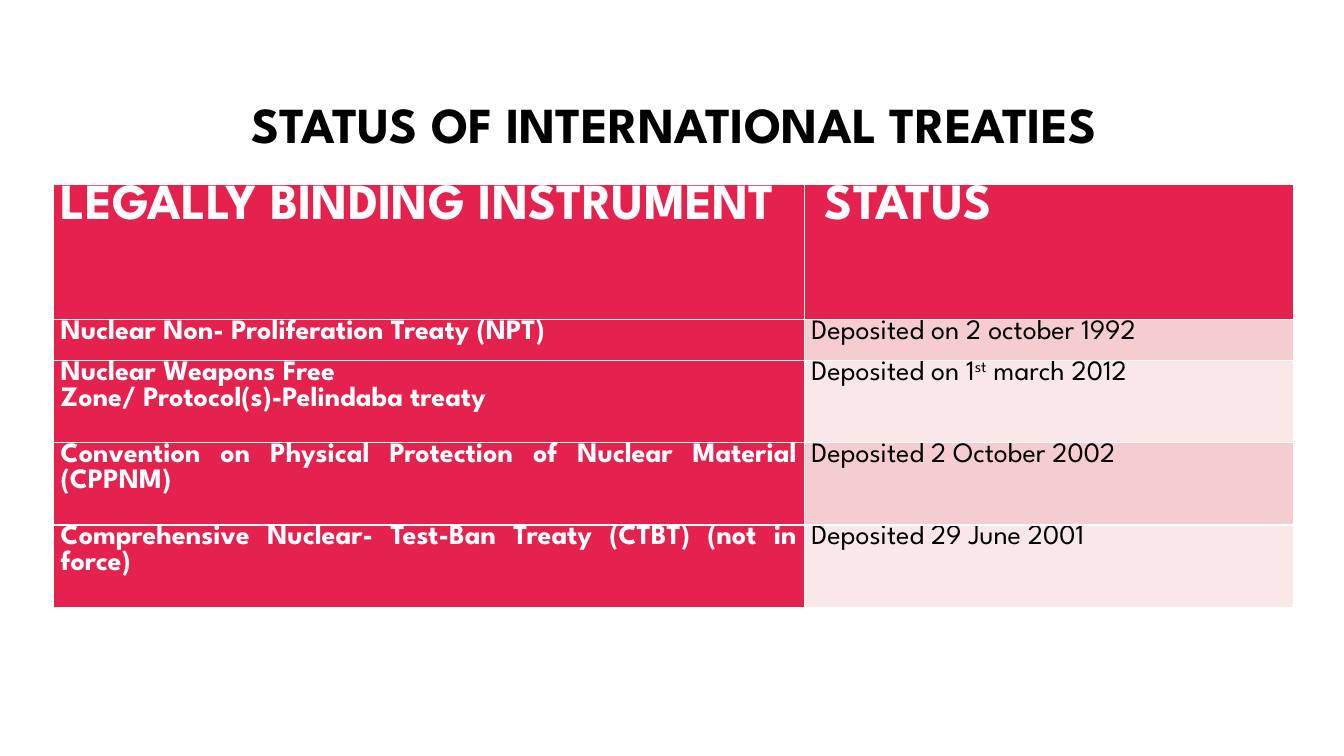
import pptx
import pptx.dml.color
import pptx.enum.text
import pptx.util

Cm = pptx.util.Cm
ALIGN = pptx.enum.text.PP_ALIGN


def color(hex_string):
    return pptx.dml.color.RGBColor.from_string(hex_string)


def write(text_frame, text, size=20, bold=True, font_color="FFFFFF", align=ALIGN.JUSTIFY, line_spacing=None):
    for line_index, line in enumerate(text.split("\n")):
        paragraph = text_frame.add_paragraph() if line_index else text_frame.paragraphs[0]
        paragraph.alignment = align
        paragraph.line_spacing = line_spacing
        for part_index, part in enumerate(line.split("^")):
            run = paragraph.add_run()
            run.text = part
            run.font.name = "League Spartan"
            run.font.size = pptx.util.Pt(size)
            run.font.bold = bold
            run.font.color.rgb = color(font_color)
            if part_index % 2:
                run.font._element.set("baseline", "30000")


presentation = pptx.Presentation()
presentation.slide_width = Cm(33.87)
presentation.slide_height = Cm(19.05)
slide = presentation.slides.add_slide(presentation.slide_layouts[5])

title = slide.shapes.title
title.left, title.top, title.width, title.height = Cm(2.26), Cm(1.42), Cm(29.46), Cm(3.58)
title.text_frame.word_wrap = True
title.text_frame.vertical_anchor = pptx.enum.text.MSO_ANCHOR.MIDDLE
write(title.text_frame, "STATUS OF INTERNATIONAL TREATIES", size=36,
      font_color="000000", align=ALIGN.CENTER, line_spacing=0.9)

treaties = [
    ("LEGALLY BINDING INSTRUMENT", "STATUS"),
    ("Nuclear Non- Proliferation Treaty (NPT)", "Deposited on 2 october 1992"),
    ("Nuclear Weapons Free\nZone/ Protocol(s)-Pelindaba treaty", "Deposited on 1^st^ march 2012"),
    ("Convention on Physical Protection of Nuclear Material (CPPNM)", "Deposited 2 October 2002"),
    ("Comprehensive Nuclear- Test-Ban Treaty (CTBT) (not in force)", "Deposited 29 June 2001"),
]
column_widths = [18.92, 12.32]
row_heights = [3.4, 1.04, 2.07, 2.07, 2.07]
band_fills = ["FAE8E9", "F5CDD0"]

table = slide.shapes.add_table(len(treaties), 2, Cm(1.35), Cm(4.65),
                               Cm(sum(column_widths)), Cm(sum(row_heights))).table
table.first_col = True
for column, width in zip(table.columns, column_widths):
    column.width = Cm(width)

for row_index, treaty in enumerate(treaties):
    table.rows[row_index].height = Cm(row_heights[row_index])
    for column_index, text in enumerate(treaty):
        cell = table.cell(row_index, column_index)
        is_header = row_index == 0
        is_label = is_header or column_index == 0
        cell.margin_left = Cm(0.52 if is_header and column_index else 0.18)
        cell.margin_right = Cm(0.18)
        cell.margin_top = cell.margin_bottom = 0
        cell.fill.solid()
        cell.fill.fore_color.rgb = color("E5224E" if is_label else band_fills[row_index % 2])
        write(cell.text_frame, text, size=36 if is_header else 20, bold=is_label,
              font_color="FFFFFF" if is_label else "000000")

presentation.save("out.pptx")
